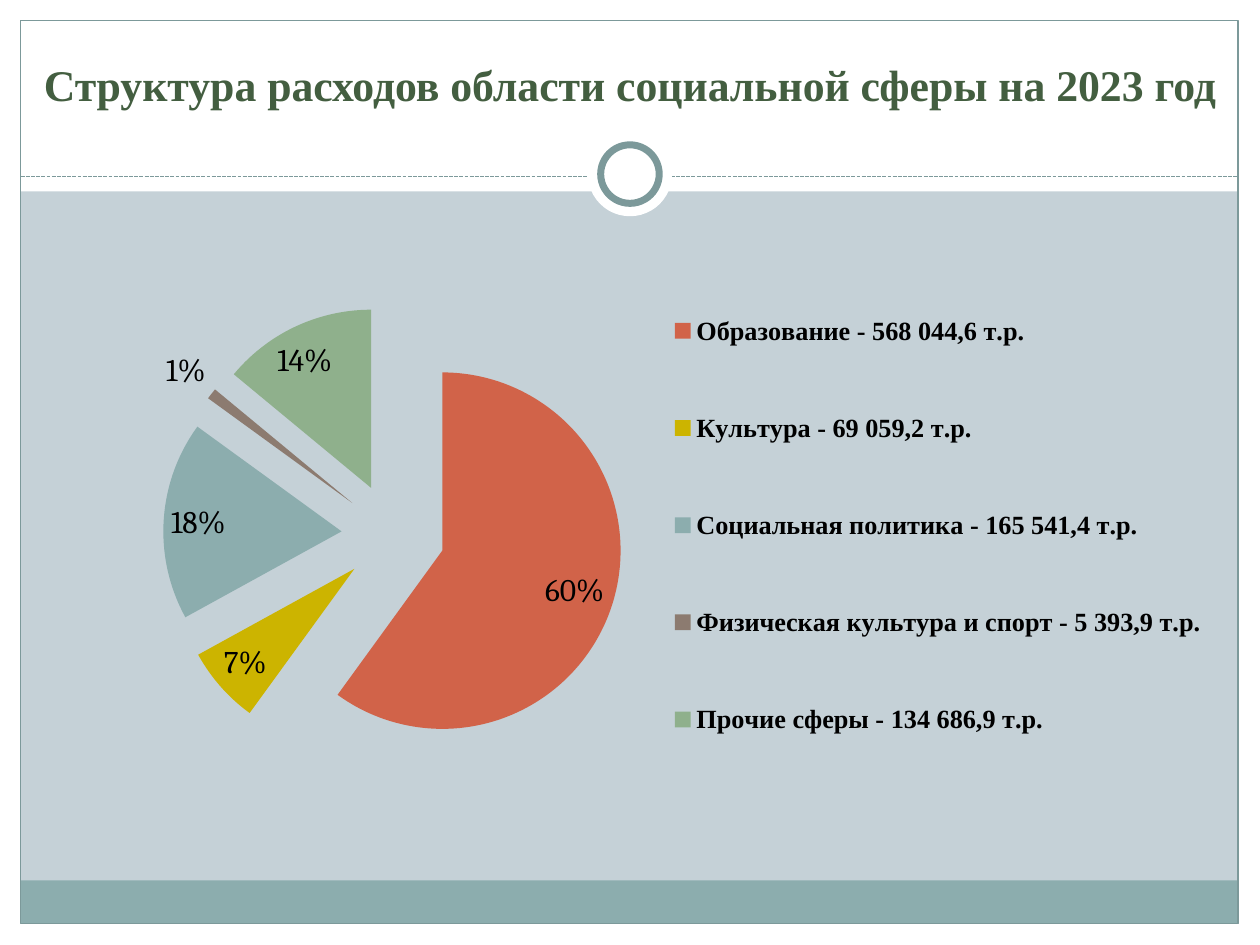
from dataclasses import dataclass

from lxml import etree
from pptx import Presentation
from pptx.chart import data as chart_data
from pptx.dml import color
from pptx.enum import chart as chart_enum, dml, shapes, text
from pptx.oxml import ns
from pptx.util import Cm, Pt

WHITE, TEAL, TEAL_LINE = "FFFFFF", "8CADAE", "7C999A"
BACKGROUND, TITLE_GREEN, BLACK = "C5D1D7", "435E40", "000000"
RECT, OVAL = shapes.MSO_SHAPE.RECTANGLE, shapes.MSO_SHAPE.OVAL


@dataclass
class Panel:
    left: float
    top: float
    width: float
    height: float
    fill: str | None = WHITE
    line_width: float = 0
    outline: int = RECT


@dataclass
class Sector:
    label: str
    share: int
    fill: str


PANELS = [
    Panel(0, 18.63, 25.4, 0.42),
    Panel(0, 0, 25.4, 3.86),
    Panel(0, 0, 0.42, 19.05),
    Panel(24.98, 0, 0.42, 19.05),
    Panel(0.42, 17.75, 24.54, 0.87, TEAL),
    Panel(0.42, 0.42, 24.54, 18.2, None, 0.75),
]
RINGS = [
    Panel(11.85, 2.66, 1.7, 1.7, outline=OVAL),
    Panel(12.11, 2.92, 1.18, 1.18, line_width=4, outline=OVAL),
]
SECTORS = [
    Sector("Образование - 568 044,6 т.р.", 60, "D16349"),
    Sector("Культура - 69 059,2 т.р.", 7, "CCB400"),
    Sector("Социальная политика - 165 541,4 т.р.", 18, "8CADAE"),
    Sector("Физическая культура и спорт - 5 393,9 т.р.", 1, "8C7B70"),
    Sector("Прочие сферы - 134 686,9 т.р.", 14, "8FB08C"),
]
EXPLOSION = 29


def rgb(value: str) -> color.RGBColor:
    return color.RGBColor.from_string(value)


def paint(fill, value: str) -> None:
    fill.solid()
    fill.fore_color.rgb = rgb(value)


def style_font(font, colour: str, **values) -> None:
    font.color.rgb = rgb(colour)
    for name, value in values.items():
        setattr(font, name, value)


def draw_panel(slide, panel: Panel) -> None:
    box = (panel.left, panel.top, panel.width, panel.height)
    shape = slide.shapes.add_shape(panel.outline, *map(Cm, box))
    shape.shadow.inherit = False
    if panel.fill:
        paint(shape.fill, panel.fill)
    else:
        shape.fill.background()
    if panel.line_width:
        paint(shape.line.fill, TEAL_LINE)
        shape.line.width = Pt(panel.line_width)
    else:
        shape.line.fill.background()


def draw_divider(slide) -> None:
    divider = slide.shapes.add_connector(
        shapes.MSO_CONNECTOR.STRAIGHT, Cm(0.42), Cm(3.56), Cm(24.96), Cm(3.56))
    paint(divider.line.fill, TEAL_LINE)
    divider.line.width = Pt(0.75)
    divider.line.dash_style = dml.MSO_LINE.SQUARE_DOT
    etree.SubElement(divider.element.spPr, ns.qn("a:effectLst"))


def draw_title(slide) -> None:
    frame = slide.shapes.add_textbox(Cm(0.3), Cm(0.64), Cm(24.8), Cm(1.7)).text_frame
    frame.word_wrap = True
    frame.vertical_anchor = text.MSO_ANCHOR.BOTTOM
    paragraph = frame.paragraphs[0]
    paragraph.alignment = text.PP_ALIGN.CENTER
    run = paragraph.add_run()
    run.text = "Структура расходов области социальной сферы на 2023 год"
    style_font(run.font, TITLE_GREEN, size=Pt(25), bold=True, name="Times New Roman")


def set_layout(parent, index: int, x: float, y: float, w: float, h: float,
               target: str | None = None) -> None:
    """Give a plot area or legend a manual layout in fractions of the chart."""
    for old in parent.findall(ns.qn("c:layout")):
        parent.remove(old)
    layout = etree.Element(ns.qn("c:layout"))
    manual = etree.SubElement(layout, ns.qn("c:manualLayout"))
    values = {"xMode": "edge", "yMode": "edge", "x": x, "y": y, "w": w, "h": h}
    if target:
        values = {"layoutTarget": target, **values}
    for name, value in values.items():
        etree.SubElement(manual, ns.qn(f"c:{name}")).set("val", str(value))
    parent.insert(index, layout)


def draw_spending_pie(slide) -> None:
    spending = chart_data.CategoryChartData()
    spending.categories = [sector.label for sector in SECTORS]
    spending.add_series("Series 1", [sector.share for sector in SECTORS])
    chart = slide.shapes.add_chart(
        chart_enum.XL_CHART_TYPE.PIE, Cm(0.84), Cm(4.24), Cm(23.62), Cm(12.7),
        spending).chart
    chart.has_title = False
    style_font(chart.font, BLACK, size=Pt(18), name="Cambria")

    plot = chart.plots[0]
    plot.vary_by_categories = True
    series = plot.series[0]
    for index, sector in enumerate(SECTORS):
        paint(series.points[index].format.fill, sector.fill)
    explosion = etree.Element(ns.qn("c:explosion"))
    explosion.set("val", str(EXPLOSION))
    series._element.find(ns.qn("c:dPt")).addprevious(explosion)

    labels = series.data_labels
    label_format = {
        "show_value": False,
        "show_percentage": True,
        "number_format": "0%",
        "number_format_is_linked": False,
        "position": chart_enum.XL_LABEL_POSITION.BEST_FIT,
    }
    for name, value in label_format.items():
        setattr(labels, name, value)
    style_font(labels.font, BLACK, size=Pt(18), name="Cambria")

    chart.has_legend = True
    legend = chart.legend
    legend.position = chart_enum.XL_LEGEND_POSITION.RIGHT
    legend.include_in_layout = False
    style_font(legend.font, BLACK, size=Pt(15), bold=True, name="Times New Roman")
    set_layout(legend._element, 1, 0.54, 0.06, 0.46, 0.88)
    plot_area = chart._chartSpace.find(".//" + ns.qn("c:plotArea"))
    set_layout(plot_area, 0, 0.03, 0.15, 0.54, 0.73, "inner")


def main() -> None:
    deck = Presentation()
    deck.slide_width, deck.slide_height = Cm(25.4), Cm(19.05)
    slide = deck.slides.add_slide(deck.slide_layouts[6])
    paint(slide.background.fill, BACKGROUND)
    for panel in PANELS:
        draw_panel(slide, panel)
    draw_divider(slide)
    for ring in RINGS:
        draw_panel(slide, ring)
    draw_title(slide)
    draw_spending_pie(slide)
    deck.save("out.pptx")


if __name__ == "__main__":
    main()
